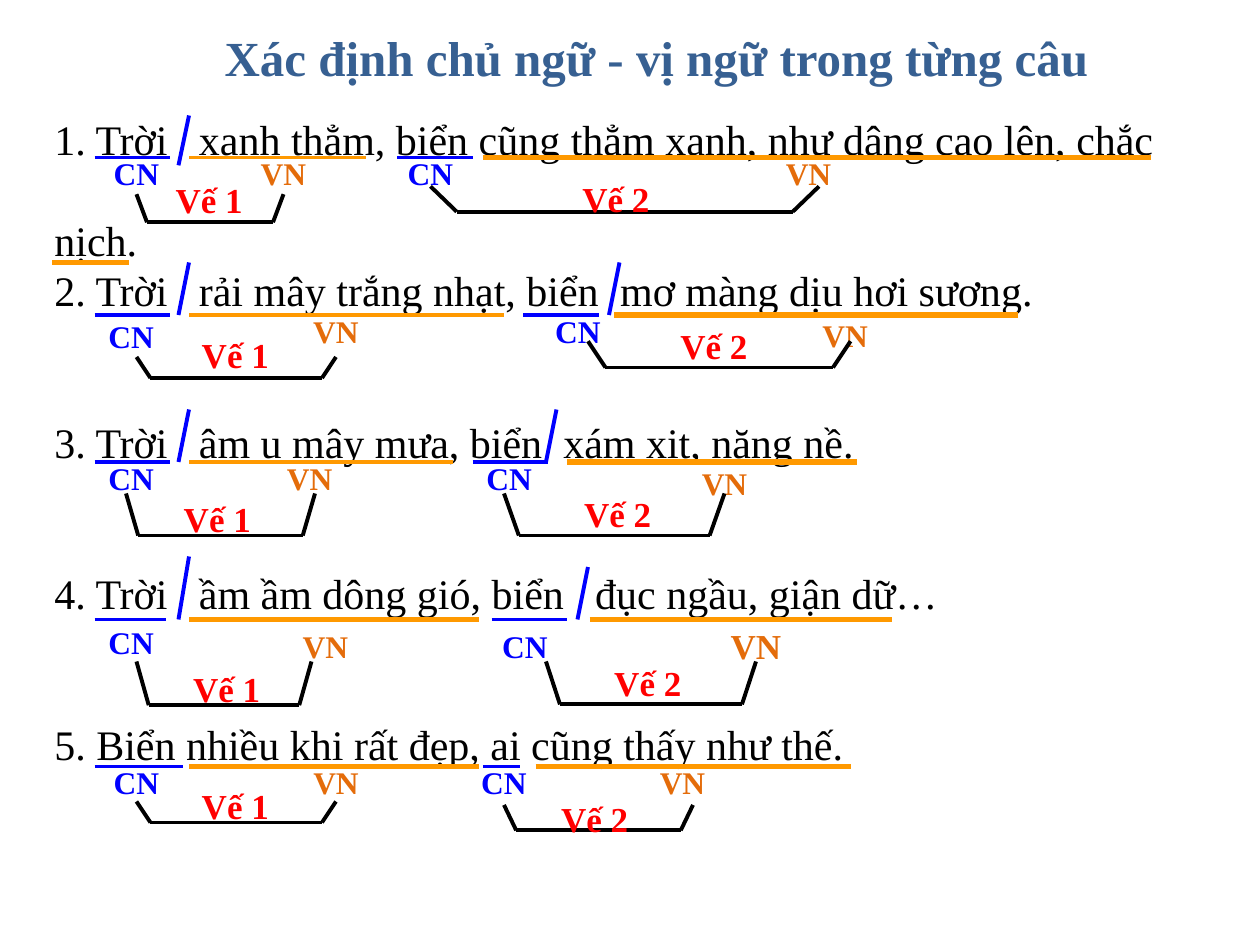
from lxml.etree import SubElement
from pptx import Presentation
from pptx.dml.color import RGBColor
from pptx.enum.shapes import MSO_CONNECTOR as Connector
from pptx.enum.text import MSO_ANCHOR as Anchor, PP_ALIGN as Align
from pptx.oxml.ns import qn
from pptx.util import Pt

BLACK = RGBColor(0x00, 0x00, 0x00)
BLUE = RGBColor(0x00, 0x00, 0xFF)
ORANGE = RGBColor(0xFF, 0x99, 0x00)
DARK_ORANGE = RGBColor(0xE4, 0x6C, 0x0A)
RED = RGBColor(0xFF, 0x00, 0x00)
STEEL = RGBColor(0x37, 0x60, 0x92)

FONT = "Times New Roman"
LINE_PITCH = 28.8
FIRST_TAB = 82.6
SLASH_WIDTH = 6
THIN, THICK = 2.25, 3
CLAUSE_WIDTH, CLAUSE_HEIGHT = 42, 24

TITLE = "Xác định chủ ngữ - vị ngữ trong từng câu"

SENTENCES = [
    ("1. Trời\txanh thẳm, biển cũng thẳm xanh, như dâng cao lên, chắc", None, 0),
    ("nịch.", None, 1),
    ("2. Trời\trải mây trắng nhạt, biển\tmơ màng dịu hơi sương.", 323.3, 0),
    ("3. Trời\tâm u mây mưa, biển\txám xịt, nặng nề.", 290.8, 2),
    ("4. Trời\tầm ầm dông gió, biển\tđục ngầu, giận dữ…", 309, 2),
    ("5. Biển nhiều khi rất đẹp, ai cũng thấy như thế.", None, 2),
]

SLASHES = [
    (108, 66, 94.5),
    (108, 150, 180), (354, 150, 180),
    (108, 234, 264), (318, 234, 264),
    (108, 318, 354), (336, 324, 354),
]

UNDERLINES = [
    {"y": 90, "subjects": [(54, 97), (227, 270)],
     "predicates": [(108, 209, THIN), (276, 657.5, THICK)]},
    {"y": 150, "subjects": [], "predicates": [(30, 73.5, THICK)]},
    {"y": 180, "subjects": [(54, 97), (299, 342)],
     "predicates": [(108, 288, THIN), (351, 582, THICK)]},
    {"y": 264, "subjects": [(54, 97), (270, 313)],
     "predicates": [(108, 259, THIN), (324, 490, THICK)]},
    {"y": 354, "subjects": [(54, 95), (281, 324)],
     "predicates": [(108, 274, THICK), (337, 510, THICK)]},
    {"y": 438, "subjects": [(54, 104.5), (276, 297)],
     "predicates": [(108, 274, THICK), (306, 486, THICK)]},
]

SUBJECT_LABELS = [
    (60, 84, 36, 30), (228, 84, 36, 30),
    (60, 180, 30, 24), (300, 174, 60.5, 30),
    (54, 258, 42, 30), (270, 258, 42, 30),
    (60, 354, 30, 26), (282, 354, 36, 30),
    (60, 432, 36, 30), (270, 432, 36, 30),
]

PREDICATE_LABELS = [
    ((144, 84, 36, 30), 18), ((432, 84, 60, 30), 18),
    ((174, 174, 36, 30), 18), ((462, 180, 42, 22.5), 18),
    ((156, 258, 42, 30), 18), ((384, 264, 60, 24), 18),
    ((156, 354, 60, 30), 18), ((402, 354, 60, 30), 20),
    ((162, 432, 60, 30), 18), ((360, 432, 60, 30), 18),
]

CLAUSES = [
    ("Vế 1", (78, 162, 111, 127, 6), (119.5, 114)),
    ("Vế 2", (246, 468, 106.5, 121, 15), (352, 113.5)),
    ("Vế 1", (78, 192, 204, 216, 8), (134.5, 202.5)),
    ("Vế 2", (336, 486, 195, 210, 10), (408, 197.5)),
    ("Vế 1", (72, 180, 282, 306, 7), (124.2, 296.5)),
    ("Vế 2", (288, 414, 282, 306, 8.5), (353, 293.5)),
    ("Vế 1", (78, 178, 378, 403, 7), (129.5, 393.5)),
    ("Vế 2", (312, 432, 378, 402.5, 8), (370.2, 390)),
    ("Vế 1", (78, 192, 458, 470, 8), (134.5, 460.5)),
    ("Vế 2", (288, 396, 460, 474.5, 7), (339.8, 467.5)),
]


def add_text(slide, box, lines, *, size, color, bold=True, align=Align.CENTER,
             anchor=Anchor.MIDDLE, wrap=False, side_inset=0, top_inset=0):
    frame = slide.shapes.add_textbox(*map(Pt, box)).text_frame
    frame.word_wrap = wrap
    frame.vertical_anchor = anchor
    frame.margin_left = frame.margin_right = Pt(side_inset)
    frame.margin_top = frame.margin_bottom = Pt(top_inset)
    for index, line in enumerate(lines):
        paragraph = frame.paragraphs[0] if index == 0 else frame.add_paragraph()
        paragraph.alignment = align
        run = paragraph.add_run()
        run.text = line
        run.font.name = FONT
        run.font.size = Pt(size)
        run.font.bold = bold
        run.font.color.rgb = color
    return frame


def add_line(slide, start, end, color, width=THIN):
    line = slide.shapes.add_connector(
        Connector.STRAIGHT, *map(Pt, (*start, *end)))
    line.line.color.rgb = color
    line.line.width = Pt(width)
    SubElement(line._element.spPr, qn("a:effectLst"))


def add_sentences(slide):
    frame = add_text(slide, (24, 65, 648, 446), [row[0] for row in SENTENCES],
                     size=24, color=BLACK, bold=False, align=Align.LEFT,
                     anchor=Anchor.TOP, wrap=True, side_inset=7.2)
    for paragraph, (_, second_tab, gap) in zip(frame.paragraphs, SENTENCES):
        paragraph.line_spacing = Pt(LINE_PITCH)
        if gap:
            paragraph.space_before = Pt(gap * LINE_PITCH)
        tabs = SubElement(paragraph._p.get_or_add_pPr(), qn("a:tabLst"))
        for stop in filter(None, (FIRST_TAB, second_tab)):
            SubElement(tabs, qn("a:tab"), pos=str(int(Pt(stop))), algn="l")


def add_clause(slide, name, bracket, center):
    left, right, top, bottom, slant = bracket
    corners = [(left, top), (left + slant, bottom),
               (right - slant, bottom), (right, top)]
    for start, end in zip(corners, corners[1:]):
        add_line(slide, start, end, BLACK)
    x, y = center
    label_box = (x - CLAUSE_WIDTH / 2, y - CLAUSE_HEIGHT / 2,
                 CLAUSE_WIDTH, CLAUSE_HEIGHT)
    add_text(slide, label_box, [name], size=20, color=RED)


def main():
    deck = Presentation()
    deck.slide_width, deck.slide_height = Pt(720), Pt(540)
    slide = deck.slides.add_slide(deck.slide_layouts[6])

    add_sentences(slide)
    for x, top, bottom in SLASHES:
        add_line(slide, (x, top), (x - SLASH_WIDTH, bottom), BLUE)
    for row in UNDERLINES:
        y = row["y"]
        for left, right in row["subjects"]:
            add_line(slide, (left, y), (right, y), BLUE)
        for left, right, width in row["predicates"]:
            add_line(slide, (left, y), (right, y), ORANGE, width)
    for box in SUBJECT_LABELS:
        add_text(slide, box, ["CN"], size=18, color=BLUE)
    for box, size in PREDICATE_LABELS:
        add_text(slide, box, ["VN"], size=size, color=DARK_ORANGE)
    for clause in CLAUSES:
        add_clause(slide, *clause)
    add_text(slide, (60, 12, 630, 41), [TITLE], size=28, color=STEEL,
             anchor=Anchor.TOP, wrap=True, side_inset=7.2, top_inset=3.6)

    deck.save("out.pptx")


if __name__ == "__main__":
    main()
